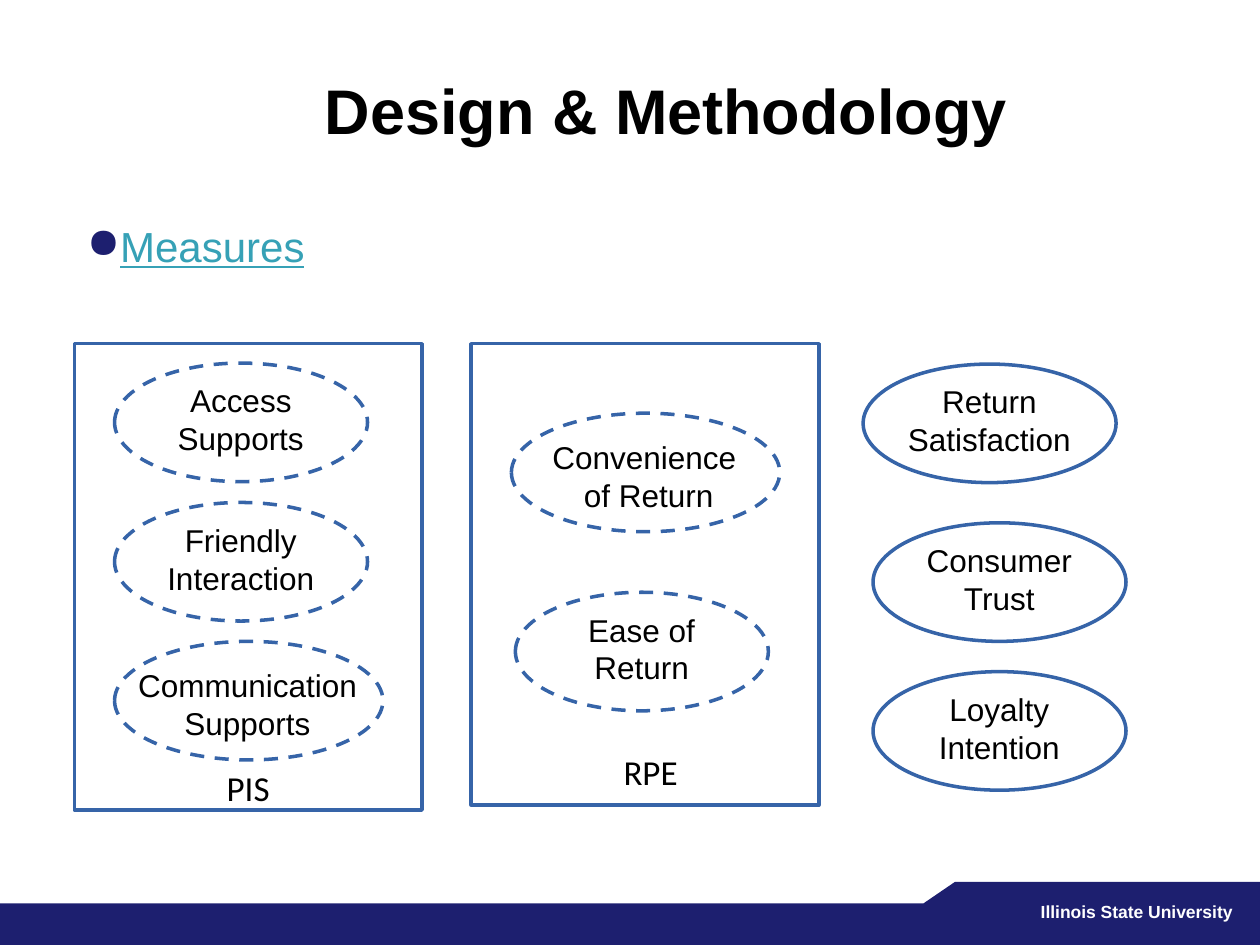
from pptx import Presentation
from pptx.dml.color import RGBColor
from pptx.enum.dml import MSO_LINE
from pptx.enum.shapes import MSO_SHAPE
from pptx.enum.text import MSO_ANCHOR, PP_ALIGN
from pptx.oxml.ns import qn
from pptx.util import Cm, Pt
from lxml import etree

RECT, OVAL = MSO_SHAPE.RECTANGLE, MSO_SHAPE.OVAL
DASH = MSO_LINE.DASH
MIDDLE = MSO_ANCHOR.MIDDLE
LEFT, CENTER = PP_ALIGN.LEFT, PP_ALIGN.CENTER
HUES = {"navy": "1D1F6F", "blue": "3664A8", "teal": "36A1B6",
        "black": "000000", "white": "FFFFFF"}


def color(name):
    return RGBColor.from_string(HUES[name])


class Deck:
    """Holds the current slide and the look of its elements."""
    font = "Arial"
    small, wide = 5.1, 5.41
    high = 2.39

    def __init__(self, slide):
        self.slide = slide
        self.shapes = slide.shapes

    def paint(self, shape, fill=None, line=None, width=2, dash=None):
        shape.shadow.inherit = False
        if fill:
            shape.fill.solid()
            shape.fill.fore_color.rgb = color(fill)
        else:
            shape.fill.background()
        if line:
            shape.line.color.rgb = color(line)
            shape.line.width = Pt(width)
            if dash:
                shape.line.dash_style = dash
        else:
            shape.line.fill.background()
        return shape

    def shape(self, kind, x, y, w, h, **look):
        item = self.shapes.add_shape(kind, Cm(x), Cm(y), Cm(w), Cm(h))
        return self.paint(item, **look)

    def outline(self, points, fill):
        pts = [(Cm(x), Cm(y)) for x, y in points]
        pen = self.shapes.build_freeform(*pts[0])
        pen.add_line_segments(pts[1:], close=True)
        return self.paint(pen.convert_to_shape(), fill=fill)

    def text(self, x, y, w, h, lines, size, hue="black", font=None,
             bold=False, align=LEFT, anchor=None, wrap=True):
        box = self.shapes.add_textbox(Cm(x), Cm(y), Cm(w), Cm(h))
        frame = box.text_frame
        frame.word_wrap = wrap
        if anchor is not None:
            frame.vertical_anchor = anchor
        for i, line in enumerate(lines):
            para = frame.paragraphs[0] if i == 0 else frame.add_paragraph()
            para.alignment = align
            run = para.add_run()
            run.text = line
            run.font.name = font or self.font
            run.font.size = Pt(size)
            run.font.bold = bold
            run.font.color.rgb = color(hue)
        return box

    def bullet(self, box, hue):
        """Give the first paragraph a hanging round bullet."""
        props = box.text_frame.paragraphs[0]._p.get_or_add_pPr()
        props.set("marL", str(Cm(0.3)))
        props.set("indent", str(Cm(-0.97)))
        tint = etree.SubElement(props, qn("a:buClr"))
        etree.SubElement(tint, qn("a:srgbClr")).set("val", HUES[hue])
        etree.SubElement(props, qn("a:buChar")).set("char", "●")

    def factor(self, x, y, lines, dash=None):
        """Draw an oval with its label; two-line labels need the wide oval."""
        broad = len(lines) > 1
        self.shape(OVAL, x, y, self.wide if broad else self.small, self.high,
                   line="blue", dash=dash)
        dx, dy, w = (0.18, 0.13, 5) if broad else (0.36, 0, 4.37)
        self.text(x + dx, y + dy, w, 2.26, lines, 18,
                  align=CENTER, anchor=MIDDLE)

    def panel(self, x, h, name, top, width):
        self.shape(RECT, x, 6.93, 7.01, h, line="blue")
        self.text(x + 2.82, top, width, 1.12, [name], 20,
                  font="Calibri", wrap=False)


def main():
    prs = Presentation()
    prs.slide_width, prs.slide_height = Cm(25.4), Cm(19.05)
    deck = Deck(prs.slides.add_slide(prs.slide_layouts[6]))

    deck.shape(RECT, 0, 18.21, 25.4, 0.84, fill="navy")
    deck.outline([(18.62, 18.21), (19.25, 17.78), (25.4, 17.78),
                  (25.4, 18.42), (18.62, 18.42)], "navy")
    deck.text(20.73, 18.03, 4.42, 0.69, ["Illinois State University"], 10,
              hue="white", bold=True, wrap=False)

    topic = deck.text(1.5, 4.32, 12.6, 1.4, ["Measures"], 24, hue="teal")
    deck.paint(topic, fill="white", line="white", width=0.75)
    deck.bullet(topic, "navy")
    topic.text_frame.paragraphs[0].runs[0].font.underline = True

    for x, y, lines in [
        (2.31, 7.32, ["Access Supports"]),
        (2.31, 10.13, ["Friendly Interaction"]),
        (2.31, 12.93, ["Communication", "Supports"]),
        (10.39, 11.94, ["Ease of Return"]),
        (10.31, 8.33, ["Convenience", " of Return"]),
    ]:
        deck.factor(x, y, lines, DASH)
    deck.panel(1.5, 9.4, "PIS", 15.32, 1.4)
    deck.panel(9.5, 9.3, "RPE", 15.01, 1.63)

    for x, y, label in [
        (17.4, 7.34, "Return Satisfaction"),
        (17.6, 10.54, "Consumer Trust"),
        (17.6, 13.54, "Loyalty Intention"),
    ]:
        deck.factor(x, y, [label])

    deck.text(6.3, 1.32, 15.01, 1.8, ["Design & Methodology"], 36, bold=True)
    prs.save("out.pptx")


if __name__ == "__main__":
    main()
